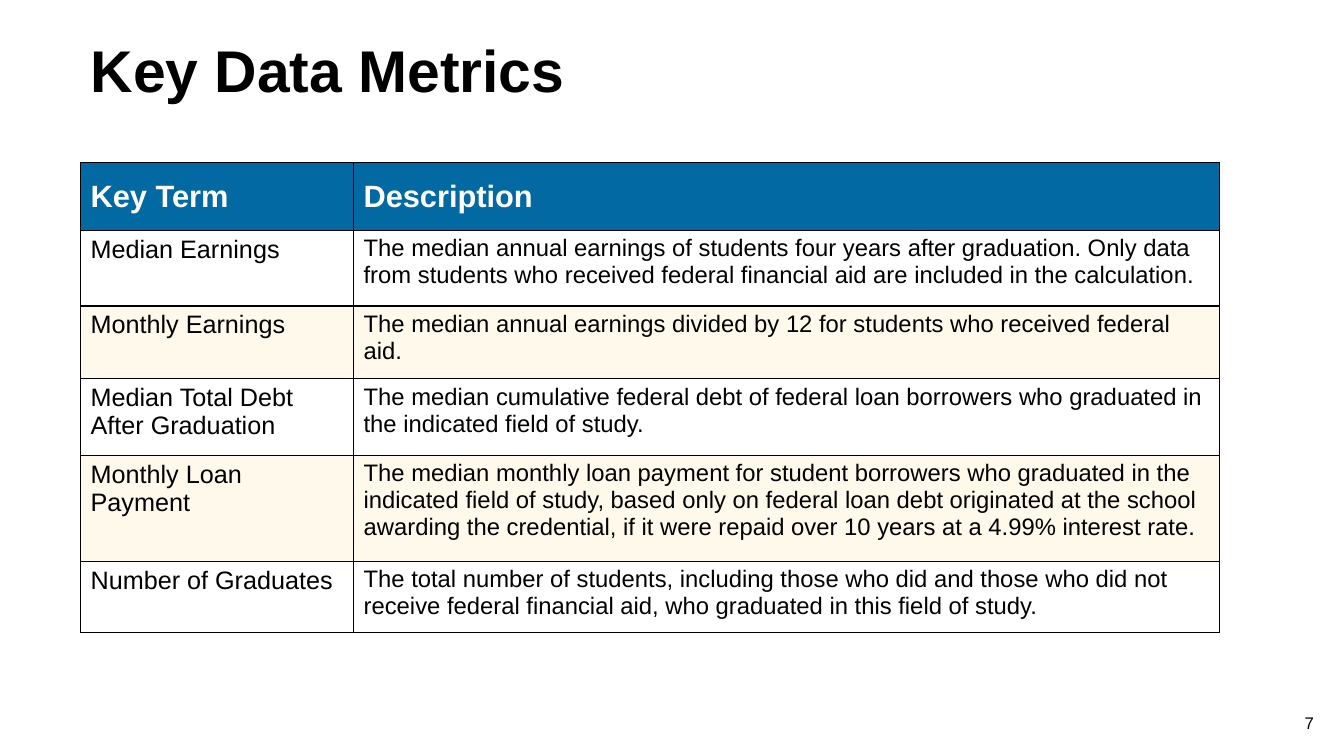
from lxml import etree
from pptx import Presentation
from pptx.dml.color import RGBColor
from pptx.enum.text import MSO_ANCHOR, MSO_AUTO_SIZE, PP_ALIGN
from pptx.oxml.ns import qn
from pptx.util import Cm, Pt

MIDDLE, TOP = MSO_ANCHOR.MIDDLE, MSO_ANCHOR.TOP
LEFT, RIGHT = PP_ALIGN.LEFT, PP_ALIGN.RIGHT
NO_AUTOFIT = MSO_AUTO_SIZE.NONE

BLACK = RGBColor(0x00, 0x00, 0x00)
WHITE = RGBColor(0xFF, 0xFF, 0xFF)
HEADER_BLUE = RGBColor(0x03, 0x69, 0xA2)
BAND_CREAM = RGBColor(0xFE, 0xF9, 0xEA)

FONT = "Arial"
TITLE_ONLY = 5
COLUMN_WIDTHS = (6.88, 21.82)
ROW_HEIGHTS = (1.7, 1.91, 1.83, 1.93, 2.67, 1.8)
HEADER_SIZE = 22
BODY_SIZES = (18, 17)

METRICS = [
    ("Key Term", "Description"),
    ("Median Earnings",
     "The median annual earnings of students four years after graduation. Only data "
     "from students who received federal financial aid are included in the calculation."),
    ("Monthly Earnings",
     "The median annual earnings divided by 12 for students who received federal aid."),
    ("Median Total Debt After Graduation",
     "The median cumulative federal debt of federal loan borrowers who graduated in "
     "the indicated field of study."),
    ("Monthly Loan Payment",
     "The median monthly loan payment for student borrowers who graduated in the "
     "indicated field of study, based only on federal loan debt originated at the school "
     "awarding the credential, if it were repaid over 10 years at a 4.99% interest rate."),
    ("Number of Graduates",
     "The total number of students, including those who did and those who did not "
     "receive federal financial aid, who graduated in this field of study."),
]


def format_paragraph(paragraph, size, color=BLACK, bold=False, alignment=LEFT):
    paragraph.alignment = alignment
    font = paragraph.font
    font.name, font.size, font.bold = FONT, Pt(size), bold
    font.color.rgb = color


def add_cell_borders(cell):
    properties = cell._tc.get_or_add_tcPr()
    # Borders come before the fill in the cell properties
    for position, side in enumerate(("a:lnL", "a:lnR", "a:lnT", "a:lnB")):
        line = etree.Element(qn(side), w=str(Pt(1)))
        fill = etree.SubElement(line, qn("a:solidFill"))
        etree.SubElement(fill, qn("a:srgbClr"), val=str(BLACK))
        properties.insert(position, line)


def add_title(slide, left, top, width, height):
    title = slide.shapes.title
    title.left, title.top, title.width, title.height = left, top, width, height
    frame = title.text_frame
    frame.text = "Key Data Metrics"
    frame.auto_size = NO_AUTOFIT
    frame.vertical_anchor = MIDDLE
    paragraph = frame.paragraphs[0]
    paragraph.line_spacing = 0.9
    format_paragraph(paragraph, 42, bold=True)


def add_metrics_table(slide, left, top, width, height):
    table = slide.shapes.add_table(
        len(METRICS), len(COLUMN_WIDTHS), left, top, width, height).table
    for column, column_width in zip(table.columns, COLUMN_WIDTHS):
        column.width = Cm(column_width)
    for row, row_height in zip(table.rows, ROW_HEIGHTS):
        row.height = Cm(row_height)

    for row_index, texts in enumerate(METRICS):
        is_header = row_index == 0
        band = WHITE if row_index % 2 else BAND_CREAM
        for column_index, text in enumerate(texts):
            cell = table.cell(row_index, column_index)
            cell.text = text
            cell.vertical_anchor = MIDDLE if is_header else TOP
            cell.fill.solid()
            cell.fill.fore_color.rgb = HEADER_BLUE if is_header else band
            add_cell_borders(cell)
            format_paragraph(
                cell.text_frame.paragraphs[0],
                HEADER_SIZE if is_header else BODY_SIZES[column_index],
                WHITE if is_header else BLACK,
                is_header)


def add_page_number(slide, left, top, width, height):
    frame = slide.shapes.add_textbox(left, top, width, height).text_frame
    frame.word_wrap = True
    frame.vertical_anchor = MIDDLE
    frame.margin_right = frame.margin_bottom = Cm(0.76)
    frame.text = "7"
    format_paragraph(frame.paragraphs[0], 12, alignment=RIGHT)


def main():
    presentation = Presentation()
    presentation.slide_width, presentation.slide_height = Cm(33.87), Cm(19.05)
    slide = presentation.slides.add_slide(presentation.slide_layouts[TITLE_ONLY])

    margin = Cm(2.03)
    add_title(slide, margin, Cm(0.36), Cm(27.43), Cm(3))
    add_metrics_table(slide, margin, Cm(4.1), Cm(sum(COLUMN_WIDTHS)), Cm(sum(ROW_HEIGHTS)))

    # Page number sits in the bottom right corner
    number_width, number_height = Cm(7.62), Cm(1.02)
    add_page_number(slide, presentation.slide_width - number_width,
                    presentation.slide_height - number_height,
                    number_width, number_height)
    presentation.save("out.pptx")


if __name__ == "__main__":
    main()
